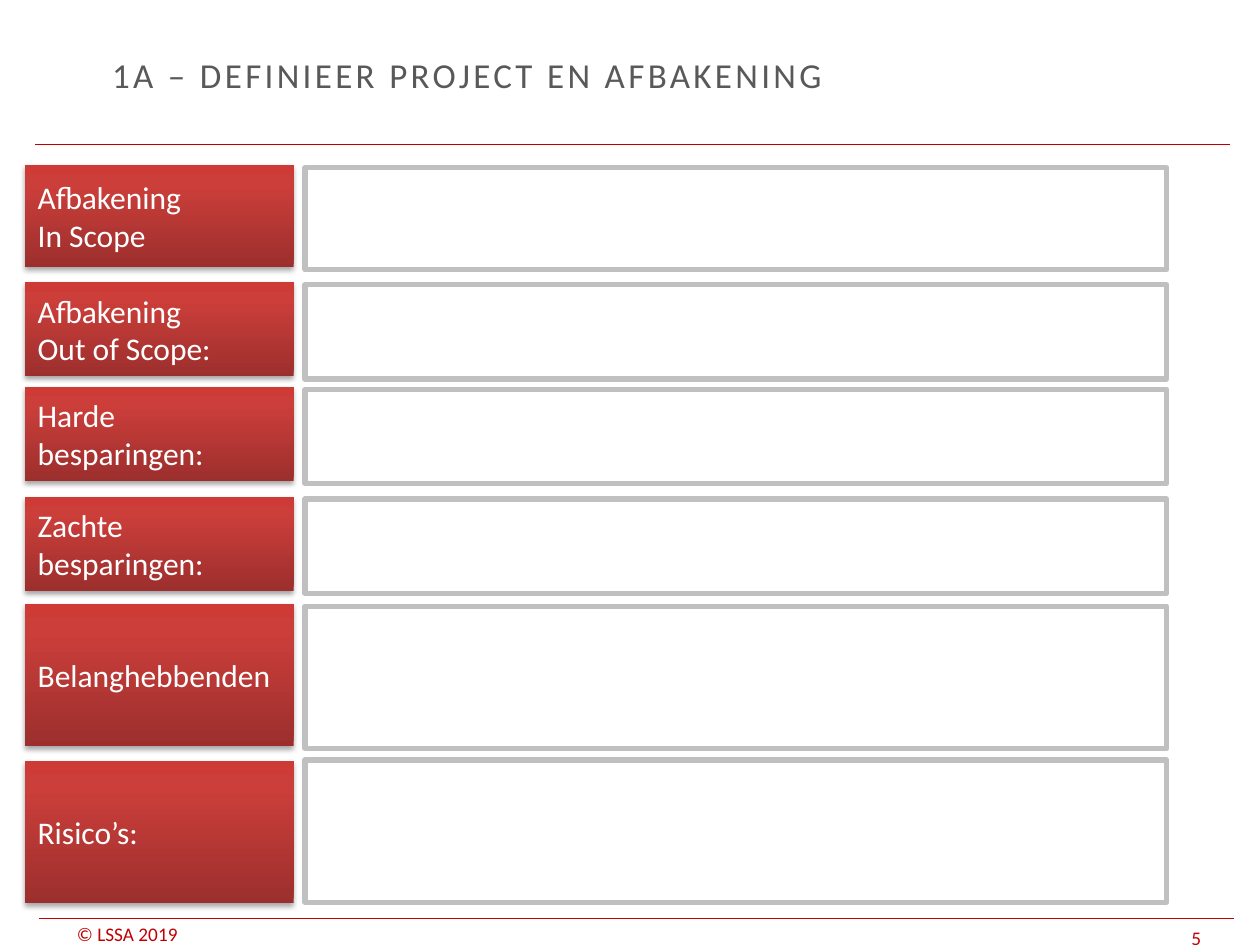
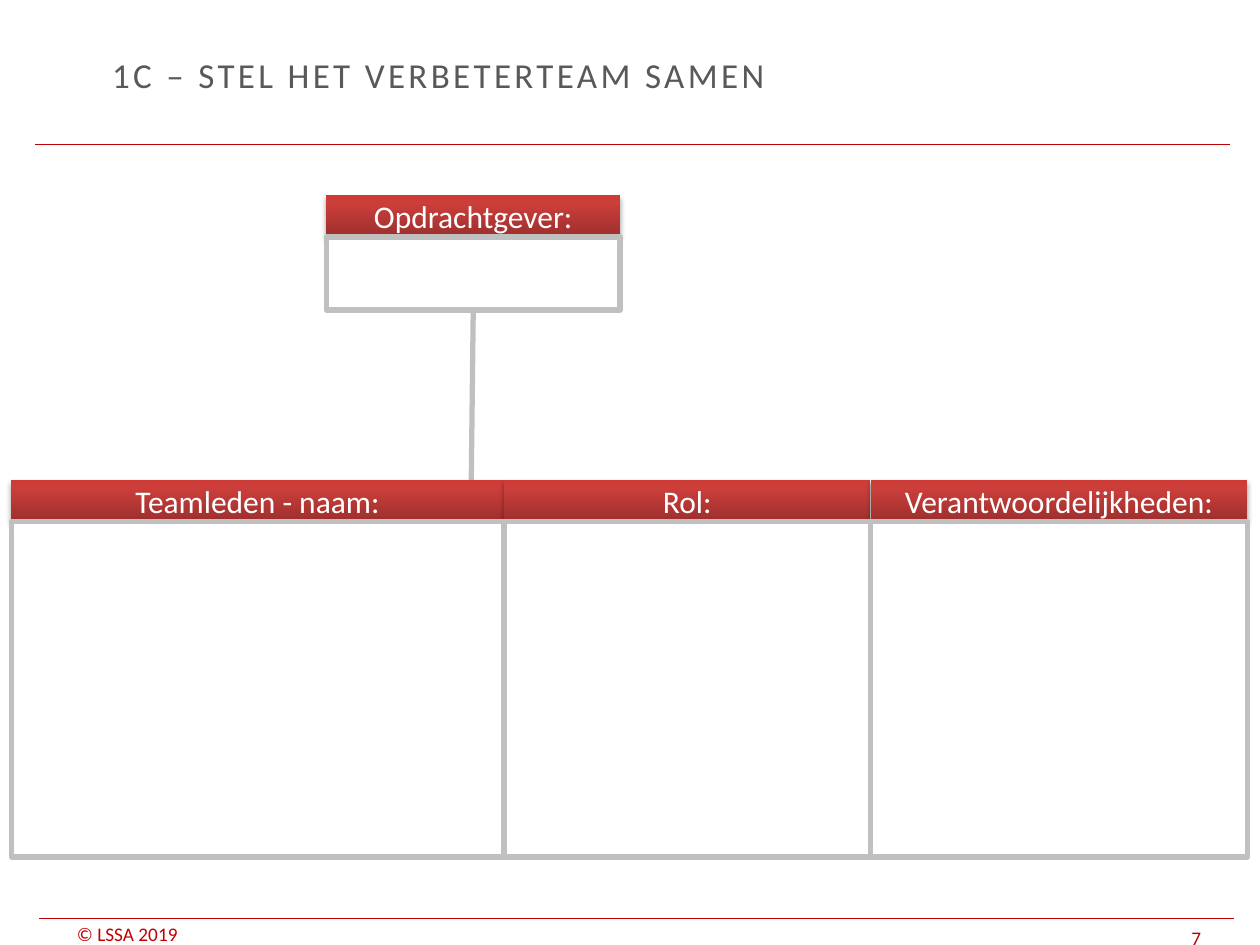
from dataclasses import dataclass
from itertools import accumulate

from lxml import etree
from pptx import Presentation
from pptx.dml.color import RGBColor
from pptx.enum.shapes import MSO_CONNECTOR, MSO_SHAPE
from pptx.enum.text import MSO_ANCHOR, PP_ALIGN
from pptx.oxml.ns import qn
from pptx.util import Cm, Pt

RECT = MSO_SHAPE.RECTANGLE
STRAIGHT = MSO_CONNECTOR.STRAIGHT
MIDDLE, BOTTOM = MSO_ANCHOR.MIDDLE, MSO_ANCHOR.BOTTOM
LEFT, CENTER = PP_ALIGN.LEFT, PP_ALIGN.CENTER
BOTTOM_SIDE = 2


@dataclass(frozen=True)
class Theme:
    font: str = "Calibri"
    red: str = "C00000"
    grey: str = "C0C0C0"
    title: str = "595959"
    white: str = "FFFFFF"
    shadow: str = "000000"
    gradient: tuple = ((0, "9C2F2D"), (80, "CB3E3A"), (100, "CE3B37"))
    title_size: int = 20
    label_size: int = 18
    footer_size: int = 11
    rule_width: float = 0.75
    box_width: int = 3


def rgb(value):
    return RGBColor.from_string(value)


def apply(target, values):
    for name, value in values.items():
        setattr(target, name, value)


def sub(parent, tag, **attrs):
    return etree.SubElement(parent, qn(tag), {k: str(v) for k, v in attrs.items()})


class Deck:
    def __init__(self, theme):
        self.theme = theme
        self.prs = Presentation()
        self.prs.slide_width, self.prs.slide_height = Cm(25.4), Cm(19.05)
        self.s = None

    def slide(self, title, number):
        t = self.theme
        self.s = self.prs.slides.add_slide(self.prs.slide_layouts[6])
        self.footer("© LSSA 2019", 1.3, 18.59, 3.61, 0.46)
        self.footer(number, 23.77, 18.57, 1.63, 0.56)
        self.line((0.71, 2.92), (24.79, 2.92), t.red, t.rule_width)
        self.line((0.79, 18.52), (24.87, 18.52), t.red, t.rule_width)
        tf = self.textbox(2.01, 0.66, 18.01, 1.68, MIDDLE)
        tf.word_wrap = True
        self.add_lines(tf, [title], t.title_size, t.title)
        tf.paragraphs[0].runs[0].font._element.set("spc", "190")

    def textbox(self, x, y, w, h, anchor):
        tf = self.s.shapes.add_textbox(Cm(x), Cm(y), Cm(w), Cm(h)).text_frame
        tf.vertical_anchor = anchor
        return tf

    def add_lines(self, tf, lines, size, color, align=LEFT):
        for i, text in enumerate(lines):
            p = tf.add_paragraph() if i else tf.paragraphs[0]
            p.alignment = align
            r = p.add_run()
            r.text = text
            apply(r.font, {"name": self.theme.font, "size": Pt(size)})
            r.font.color.rgb = rgb(color)

    def footer(self, text, x, y, w, h):
        tf = self.textbox(x, y, w, h, BOTTOM)
        apply(tf, {"margin_top": 0, "margin_bottom": 0, "word_wrap": False})
        self.add_lines(tf, [text], self.theme.footer_size, self.theme.red)

    def line(self, start, end, color, width):
        cx = self.s.shapes.add_connector(STRAIGHT, *map(Cm, start + end))
        cx.line.color.rgb = rgb(color)
        cx.line.width = Pt(width)
        sub(cx._element.spPr, "a:effectLst")
        return cx

    def rect(self, x, y, w, h):
        sp = self.s.shapes.add_shape(RECT, Cm(x), Cm(y), Cm(w), Cm(h))
        sp.shadow.inherit = False
        return sp

    def box(self, x, y, w, h):
        sp = self.rect(x, y, w, h)
        sp.fill.solid()
        sp.fill.fore_color.rgb = rgb(self.theme.white)
        sp.line.color.rgb = rgb(self.theme.grey)
        sp.line.width = Pt(self.theme.box_width)
        return sp

    def label(self, lines, x, y, w, h, align=LEFT):
        t = self.theme
        sp = self.rect(x, y, w, h)
        sp.line.fill.background()
        sp.fill.gradient()
        sp.fill.gradient_angle = 90
        stops = sp._element.spPr.find(".//" + qn("a:gsLst"))
        for gs in list(stops):
            stops.remove(gs)
        for pos, color in t.gradient:
            sub(sub(stops, "a:gs", pos=pos * 1000), "a:srgbClr", val=color)
        effects = sp._element.spPr.find(qn("a:effectLst"))
        shadow = sub(effects, "a:outerShdw", blurRad=Pt(3.1), dist=Pt(1.8),
                     dir=5400000, rotWithShape=0)
        sub(sub(shadow, "a:srgbClr", val=t.shadow), "a:alpha", val=35000)
        tf = sp.text_frame
        apply(tf, {"word_wrap": True, "vertical_anchor": MIDDLE})
        self.add_lines(tf, lines, t.label_size, t.white, align)


def scope_slide(deck):
    deck.slide("1A – DEFINIEER PROJECT EN AFBAKENING", "5")
    rows = [
        (["Afbakening", "In Scope"], 3.33, 3.38, 2.06),
        (["Afbakening", "Out of Scope:"], 5.69, 5.74, 1.9),
        (["Harde", "besparingen:"], 7.8, 7.85, 1.9),
        (["Zachte besparingen:"], 10.01, 10.06, 1.9),
        (["Belanghebbenden"], 12.17, 12.22, 2.87),
        (["Risico’s:"], 15.34, 15.32, 2.87),
    ]
    for lines, label_y, box_y, h in rows:
        deck.box(6.15, box_y, 17.37, h)
        deck.label(lines, 0.51, label_y, 5.41, h)


def team_slide(deck):
    deck.slide("1C – STEL HET VERBETERTEAM SAMEN", "7")
    head_h, team_y = 0.84, 9.68
    sponsor_x, sponsor_y, sponsor_w = 6.58, 3.94, 5.92
    deck.label(["Opdrachtgever:"], sponsor_x, sponsor_y, sponsor_w, head_h, CENTER)
    sponsor = deck.box(sponsor_x, sponsor_y + head_h, sponsor_w, 1.47)
    cx = deck.line((9.54, 6.25), (9.5, team_y), deck.theme.grey, deck.theme.box_width)
    cx.begin_connect(sponsor, BOTTOM_SIDE)

    heads = ["Teamleden - naam:", "Rol:", "Verantwoordelijkheden:"]
    widths = [9.93, 7.39, 7.6]
    lefts = list(accumulate(widths[:-1], initial=0.23))
    for head, x, w in zip(heads, lefts, widths):
        deck.label([head], x, team_y, w, head_h, CENTER)
    for x, w in zip(lefts, widths):
        deck.box(x, team_y + head_h, w, 6.76)


def main():
    deck = Deck(Theme())
    scope_slide(deck)
    team_slide(deck)
    deck.prs.save("out.pptx")


if __name__ == "__main__":
    main()
